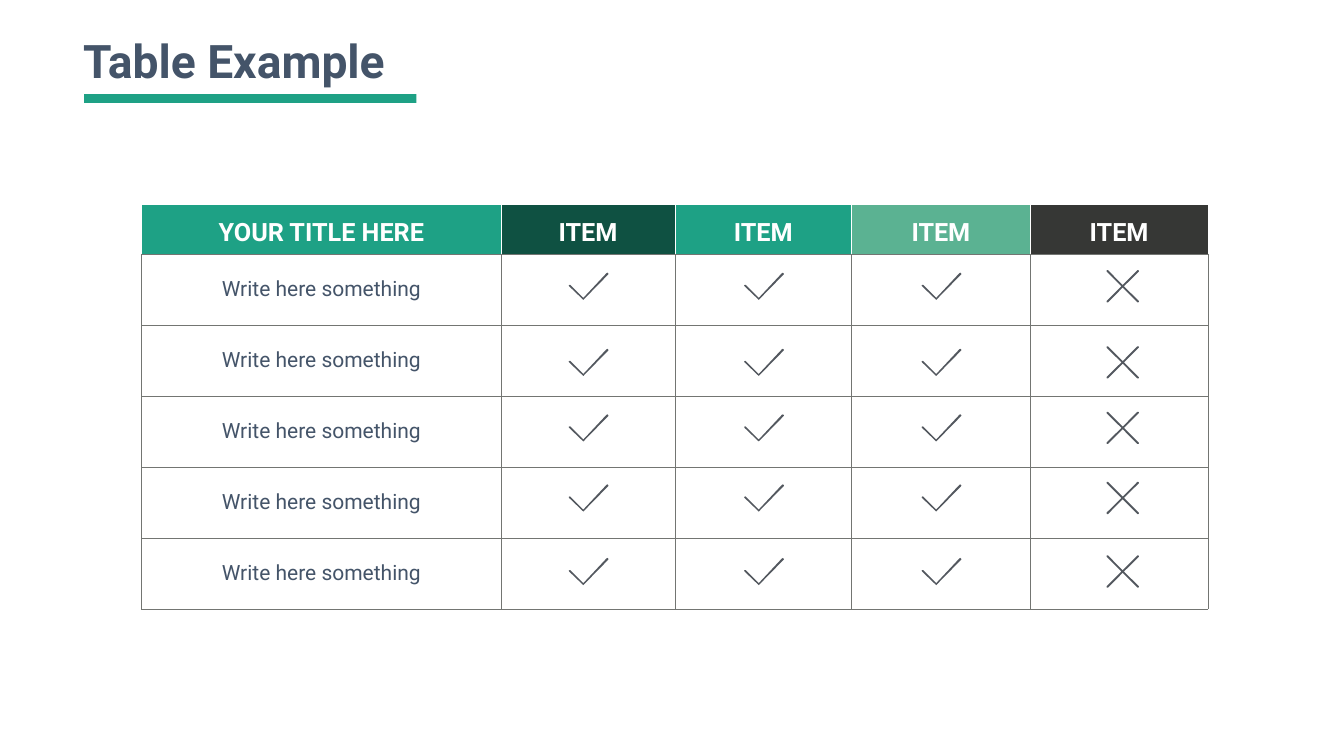
from lxml.etree import SubElement
from pptx import Presentation
from pptx.dml.color import RGBColor
from pptx.enum.shapes import MSO_SHAPE
from pptx.enum.text import MSO_ANCHOR, MSO_AUTO_SIZE, PP_ALIGN
from pptx.oxml.ns import qn
from pptx.util import Pt

GREEN, SLATE, WHITE, BORDER, MARK = "1EA185", "445469", "FFFFFF", "737572", "53585F"


def color(hex_string):
    return RGBColor.from_string(hex_string)


def style_paragraph(paragraph, size, bold, font_color):
    paragraph.font.name = "Roboto"
    paragraph.font.size = Pt(size)
    paragraph.font.bold = bold
    paragraph.font.color.rgb = color(font_color)


presentation = Presentation()
presentation.slide_width = Pt(1919.52)
presentation.slide_height = Pt(1080)
slide = presentation.slides.add_slide(presentation.slide_layouts[6])

# Comparison table
headers = ["YOUR TITLE HERE", "ITEM", "ITEM", "ITEM", "ITEM"]
header_fills = [GREEN, "0F5142", GREEN, "5BB292", "363735"]
column_widths = [513.36, 248.4, 252, 255.6, 253.44]
row_heights = [71.28] + [101.4] * 5
table = slide.shapes.add_table(
    len(row_heights), len(column_widths), Pt(202.32), Pt(291.6),
    Pt(sum(column_widths)), Pt(sum(row_heights))).table
table.first_row = False
table.horz_banding = False
for column, width in zip(table.columns, column_widths):
    column.width = Pt(width)
for row, height in zip(table.rows, row_heights):
    row.height = Pt(height)

for row_index, row in enumerate(table.rows):
    for column_index, cell in enumerate(row.cells):
        is_header = row_index == 0

        # Borders come before the fill in the cell properties
        properties = cell._tc.get_or_add_tcPr()
        for side in ("lnL", "lnR", "lnT", "lnB"):
            line_color = WHITE if is_header and side != "lnB" else BORDER
            line = SubElement(properties, qn(f"a:{side}"), w=str(Pt(1)))
            line_fill = SubElement(line, qn("a:solidFill"))
            SubElement(line_fill, qn("a:srgbClr"), val=line_color)

        paragraph = cell.text_frame.paragraphs[0]
        paragraph.alignment = PP_ALIGN.CENTER
        if is_header:
            cell.fill.solid()
            cell.fill.fore_color.rgb = color(header_fills[column_index])
            cell.margin_top = Pt(19.44)
            paragraph.text = headers[column_index]
            style_paragraph(paragraph, 36, True, WHITE)
        else:
            cell.fill.background()
            cell.vertical_anchor = MSO_ANCHOR.MIDDLE
            if column_index == 0:
                paragraph.text = "Write here something"
                style_paragraph(paragraph, 30, False, SLATE)

# Mark outlines, as offsets from the centre of the mark
check = [(28.4, -18), (27, -19.4), (25.6, -18.7), (-7.5, 16.6), (-26.2, -2.1),
         (-27, -2.1), (-28.4, -1.4), (-27.7, 0), (-8.2, 18.7), (-7.5, 19.4),
         (-6.8, 18.7), (28.4, -17.2)]
arm = [(0, -1.8), (21, -23), (22.3, -23), (23, -22.3), (23, -21)]
cross = []
for quarter in range(4):
    cross += arm
    arm = [(-y, x) for x, y in arm]

# Check and cross marks over the table
mark_columns = [(840.6, check), (1091.16, check), (1344.6, check), (1603.44, cross)]
for center_y in (408.96, 517.68, 611.28, 711.36, 816.48):
    for center_x, outline in mark_columns:
        points = [(Pt(center_x + x), Pt(center_y + y)) for x, y in outline]
        builder = slide.shapes.build_freeform(*points[0])
        builder.add_line_segments(points[1:], close=True)
        mark = builder.convert_to_shape()
        mark.shadow.inherit = False
        mark.fill.solid()
        mark.fill.fore_color.rgb = color(MARK)
        mark.line.fill.background()

# Title
title = slide.shapes.add_textbox(Pt(111.6), Pt(43.2), Pt(446.4), Pt(87.12))
title.text_frame.word_wrap = False
title.text_frame.auto_size = MSO_AUTO_SIZE.SHAPE_TO_FIT_TEXT
paragraph = title.text_frame.paragraphs[0]
paragraph.text = "Table Example"
style_paragraph(paragraph, 66, True, SLATE)

# Title underline
underline = slide.shapes.add_shape(
    MSO_SHAPE.RECTANGLE, Pt(120.24), Pt(134.64), Pt(474.48), Pt(12.24))
underline.shadow.inherit = False
underline.fill.solid()
underline.fill.fore_color.rgb = color(GREEN)
underline.line.fill.background()

presentation.save("out.pptx")
